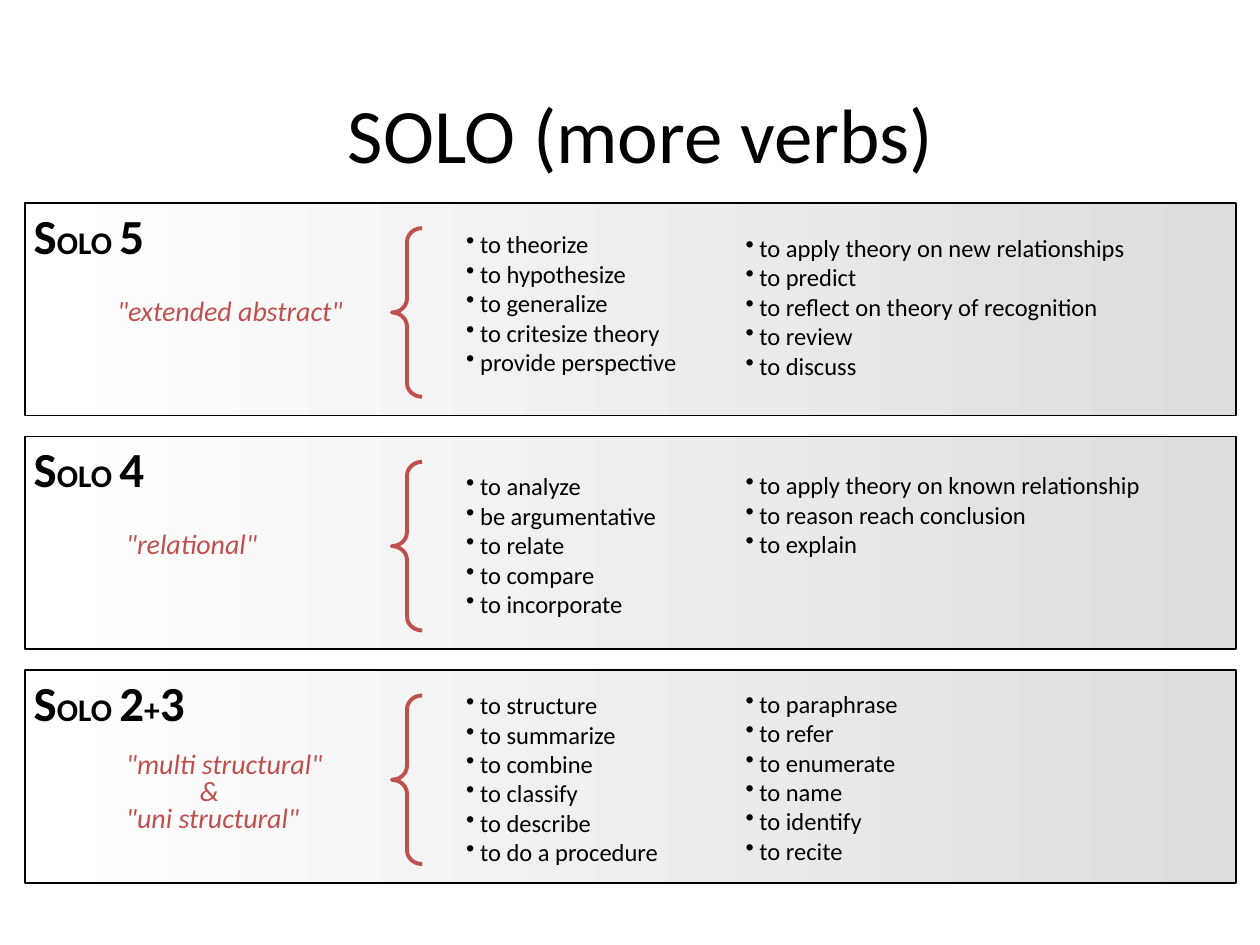
import pptx
import pptx.dml.color
import pptx.enum.shapes
import pptx.enum.text
import pptx.oxml
import pptx.util

Cm = pptx.util.Cm
Pt = pptx.util.Pt
RGBColor = pptx.dml.color.RGBColor
Shape = pptx.enum.shapes.MSO_SHAPE

BLACK = RGBColor(0x00, 0x00, 0x00)
WHITE = RGBColor(0xFF, 0xFF, 0xFF)
GREY = RGBColor(0xDD, 0xDD, 0xDD)
RED = RGBColor(0xC0, 0x50, 0x4D)
FONT = "Calibri"

BAND_LEFT, BAND_TOP, BAND_WIDTH, BAND_HEIGHT = 0.51, 4.09, 24.41, 4.29
BAND_PITCH = 4.71

LEVELS = [
    {
        "number": [("5", 28)],
        "label": [('"extended abstract"', 0)],
        "label_at": (1.6, 1.83),
        "label_height": 0.8,
        "spacing": 0.8,
        "verbs": [
            (0.41, ["to theorize", "to hypothesize", "to generalize",
                    "to critesize theory", "provide perspective"]),
            (0.48, ["to apply theory on new relationships", "to predict",
                    "to reflect on theory of recognition", "to review", "to discuss"]),
        ],
    },
    {
        "number": [("4", 28)],
        "label": [('"relational"', 0)],
        "label_at": (1.78, 1.68),
        "label_height": 0.94,
        "spacing": 1.0,
        "verbs": [
            (0.58, ["to analyze", "be argumentative", "to relate",
                    "to compare", "to incorporate"]),
            (0.56, ["to apply theory on known relationship",
                    "to reason reach conclusion", "to explain"]),
        ],
    },
    {
        "number": [("2", 28), ("+", 18), ("3", 28)],
        "label": [('"multi structural"', 0), ("&", 1.49), ('"uni structural"', 0)],
        "label_at": (1.78, 1.55),
        "label_height": 1.88,
        "spacing": 0.8,
        "verbs": [
            (0.28, ["to structure", "to summarize", "to combine",
                    "to classify", "to describe", "to do a procedure"]),
            (0.25, ["to paraphrase", "to refer", "to enumerate",
                    "to name", "to identify", "to recite"]),
        ],
    },
]


def add_box(page, left, top, width, height):
    """Add an empty wrapping text box and return its text frame."""
    box = page.shapes.add_textbox(Cm(left), Cm(top), Cm(width), Cm(height))
    box.text_frame.word_wrap = True
    return box.text_frame


def add_text(para, text, size=14, color=BLACK, bold=False, italic=False):
    """Append a formatted span to a paragraph."""
    span = para.add_run()
    span.text = text
    font = span.font
    font.name, font.size, font.bold, font.italic = FONT, Pt(size), bold, italic
    font.color.rgb = color


def add_para(frame, index):
    """Return the first paragraph of a frame, or a new one after it."""
    return frame.add_paragraph() if index else frame.paragraphs[0]


def set_indent(para, left, first=0.0, bullet=None):
    """Set the indents of a paragraph and its bullet."""
    properties = para._p.get_or_add_pPr()
    properties.set("marL", str(Cm(left)))
    properties.set("indent", str(Cm(first)))
    if bullet:
        mark = pptx.oxml.parse_xml(
            '<a:buChar xmlns:a="http://schemas.openxmlformats.org/drawingml/2006/main"/>')
        mark.set("char", bullet)
        properties.append(mark)


def add_title(page, left, top, width, height):
    """Place the centred slide title."""
    frame = add_box(page, left, top, width, height)
    frame.vertical_anchor = pptx.enum.text.MSO_ANCHOR.MIDDLE
    para = frame.paragraphs[0]
    para.alignment = pptx.enum.text.PP_ALIGN.CENTER
    add_text(para, "SOLO (more verbs)", size=44)


def add_panel(page, left, top, width, height):
    """Draw the outlined gradient panel behind a level."""
    panel = page.shapes.add_shape(Shape.RECTANGLE, Cm(left), Cm(top), Cm(width), Cm(height))
    panel.shadow.inherit = False
    panel.fill.gradient()
    panel.fill.gradient_angle = 0
    for stop, color in zip(panel.fill.gradient_stops, (WHITE, GREY)):
        stop.color.rgb = color
    panel.line.color.rgb = BLACK
    panel.line.width = Pt(1)


def add_brace(page, left, top, width, height):
    """Draw the brace that opens the verb lists."""
    brace = page.shapes.add_shape(Shape.LEFT_BRACE, Cm(left), Cm(top), Cm(width), Cm(height))
    brace.shadow.inherit = False
    brace.adjustments[0] = 0.456
    brace.fill.background()
    brace.line.color.rgb = RED
    brace.line.width = Pt(2.25)


def add_verbs(page, left, top, width, verbs):
    """Place one bulleted list of verbs."""
    frame = add_box(page, left, top, width, 0.25 + 0.59 * len(verbs))
    for index, verb in enumerate(verbs):
        para = add_para(frame, index)
        set_indent(para, 0.28, first=-0.28, bullet="•")
        add_text(para, verb)


def add_level(page, level, left, top, width, height):
    """Place one level: panel, heading, label, brace and verb lists."""
    add_panel(page, left, top, width, height)
    heading = add_box(page, left - 0.08, top - 0.08, 4.2, 1.45).paragraphs[0]
    for text, size in [("S", 28), ("OLO ", 18)] + level["number"]:
        add_text(heading, text, size=size, bold=True)
    across, down = level["label_at"]
    label = add_box(page, left + across, top + down, 5.4, level["label_height"])
    for index, (text, indent) in enumerate(level["label"]):
        para = add_para(label, index)
        para.line_spacing = level["spacing"]
        set_indent(para, indent)
        add_text(para, text, size=16, color=RED, italic=True)
    add_brace(page, left + 7.39, top + 0.51, 0.61, 3.4)
    for (down, verbs), across, span_width in zip(level["verbs"], (8.64, 14.27), (5.2, 9.6)):
        add_verbs(page, left + across, top + down, span_width, verbs)


def main():
    """Build the slide and save the deck."""
    deck = pptx.Presentation()
    deck.slide_width, deck.slide_height = Cm(25.4), Cm(19.05)
    page = deck.slides.add_slide(deck.slide_layouts[6])
    add_title(page, 1.27, 0.69, 23.29, 3.99)
    for index, level in enumerate(LEVELS):
        add_level(page, level, BAND_LEFT, BAND_TOP + index * BAND_PITCH, BAND_WIDTH, BAND_HEIGHT)
    deck.save("out.pptx")


if __name__ == "__main__":
    main()
